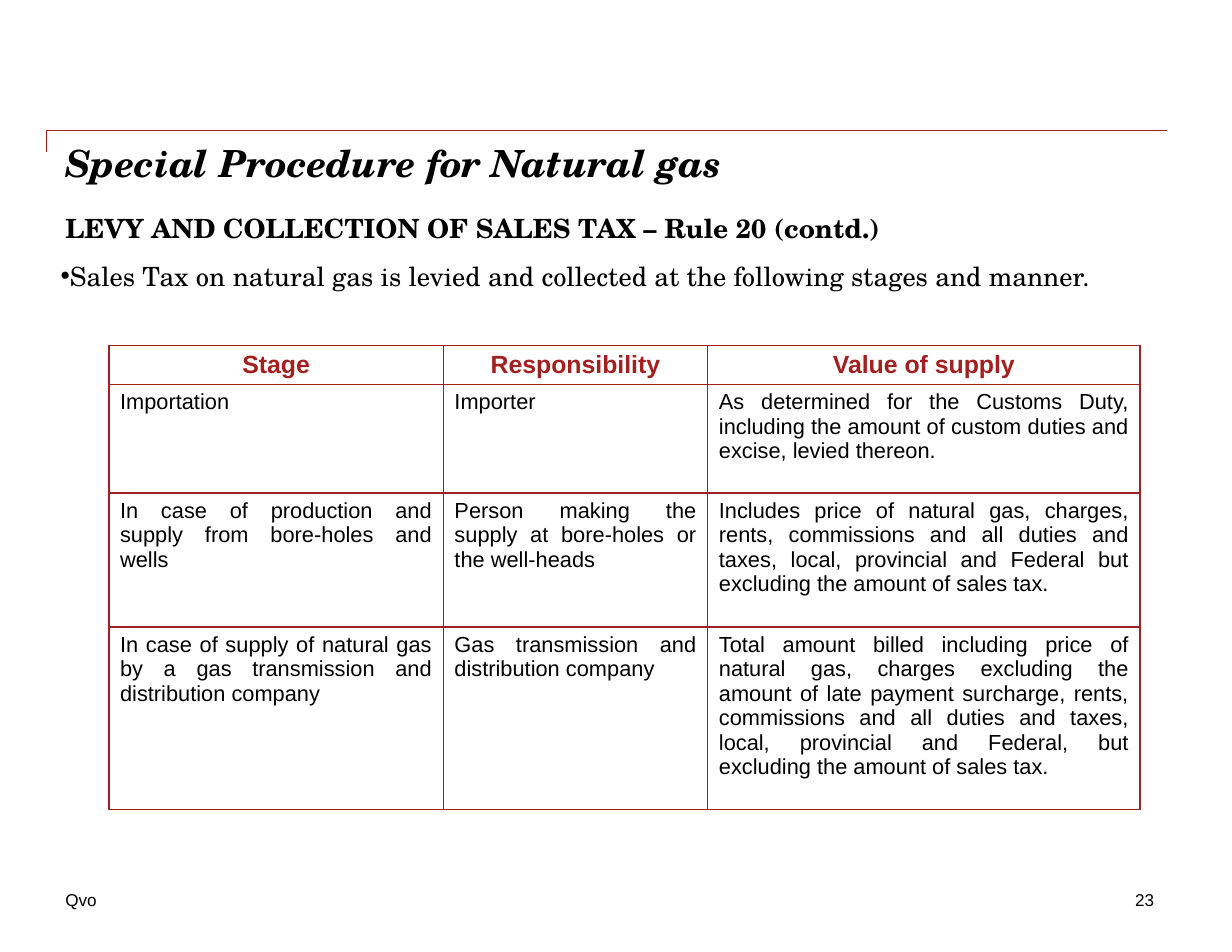
"""Build the slide on the special sales tax procedure for natural gas."""
import pptx
import pptx.dml.color
import pptx.enum.shapes
import pptx.enum.text
import pptx.oxml
import pptx.oxml.ns
import pptx.util
from pptx.oxml.xmlchemy import OxmlElement

Pt = pptx.util.Pt
ALIGN = pptx.enum.text.PP_ALIGN
RED = pptx.dml.color.RGBColor(0xA3, 0x20, 0x20)
BLACK = pptx.dml.color.RGBColor(0, 0, 0)
SERIF, SANS = "TeX Gyre Schola", "Arial"

COLUMNS = (215, 170, 278)
HEIGHTS = (25, 70, 86, 117.5)
ROWS = (
    ("Stage", "Responsibility", "Value of supply"),
    ("Importation", "Importer",
     "As determined for the Customs Duty, including the amount of custom "
     "duties and excise, levied thereon."),
    ("In case of production and supply from bore-holes and wells",
     "Person making the supply at bore-holes or the well-heads",
     "Includes price of natural gas, charges, rents, commissions and all "
     "duties and taxes, local, provincial and Federal but excluding the "
     "amount of sales tax."),
    ("In case of supply of natural gas by a gas transmission and "
     "distribution company",
     "Gas transmission and distribution company",
     "Total amount billed including price of natural gas, charges excluding "
     "the amount of late payment surcharge, rents, commissions and all duties "
     "and taxes, local, provincial and Federal, but excluding the amount of "
     "sales tax."),
)


def write(tf, text, size, font, color=BLACK, bold=False, italic=False,
          align=ALIGN.LEFT):
    """Write one formatted run in the first paragraph and return the paragraph."""
    p = tf.paragraphs[0]
    p.alignment = align
    r = p.add_run()
    r.text = text
    r.font.size, r.font.name = Pt(size), font
    r.font.bold, r.font.italic = bold, italic
    r.font.color.rgb = color
    return p


def place(sp, left, top, width, height, wrap=True):
    """Position a text shape, clear its insets and return its text frame."""
    sp.left, sp.top, sp.width, sp.height = map(Pt, (left, top, width, height))
    tf = sp.text_frame
    tf.margin_left = tf.margin_top = tf.margin_right = tf.margin_bottom = 0
    tf.vertical_anchor = pptx.enum.text.MSO_ANCHOR.TOP
    tf.auto_size = pptx.enum.text.MSO_AUTO_SIZE.NONE
    tf.word_wrap = wrap
    return tf


def set_bullet(p, char=None):
    """Set a flush bullet, or none, on a paragraph without indents."""
    p.space_before, p.space_after = Pt(0), Pt(10)
    pPr = p._p.get_or_add_pPr()
    pPr.set("marL", "0")
    pPr.set("indent", "0")
    bu = OxmlElement("a:buChar" if char else "a:buNone")
    if char:
        bu.set("char", char)
    pPr.append(bu)


def add_rule(s):
    """Draw the bent rule above the title."""
    c = s.shapes.add_connector(pptx.enum.shapes.MSO_CONNECTOR.ELBOW,
                               Pt(30), Pt(98), Pt(750), Pt(84))
    c.line.color.rgb, c.line.width = RED, Pt(1)
    gd = OxmlElement("a:gd")
    gd.set("name", "adj1")
    gd.set("fmla", "val 0")
    spPr = c._element.spPr
    spPr.find(pptx.oxml.ns.qn("a:prstGeom")).get_or_add_avLst().append(gd)
    spPr.append(OxmlElement("a:effectLst"))


def add_footer(s, text, left, width, align):
    """Add one small text at the foot of the slide."""
    sp = s.shapes.add_textbox(0, 0, 0, 0)
    tf = place(sp, left, 571.5, width, 13.5, wrap=False)
    write(tf, text, 11, SANS, align=align)


def set_borders(cell):
    """Outline a cell in red and leave it unfilled."""
    tcPr = cell._tc.get_or_add_tcPr()
    for side in "LRTB":
        tcPr.append(pptx.oxml.parse_xml(
            f'<a:ln{side} {pptx.oxml.ns.nsdecls("a")} w="{Pt(1)}"><a:solidFill>'
            f'<a:srgbClr val="{RED}"/></a:solidFill></a:ln{side}>'))
    cell.fill.background()


def add_stages(s):
    """Add the table of stages, responsibility and value of supply."""
    table = s.shapes.add_table(len(ROWS), len(COLUMNS), Pt(70), Pt(222),
                               Pt(sum(COLUMNS)), Pt(sum(HEIGHTS))).table
    table.first_row = table.horz_banding = False
    for col, width in zip(table.columns, COLUMNS):
        col.width = Pt(width)
    for i, (height, texts) in enumerate(zip(HEIGHTS, ROWS)):
        table.rows[i].height = Pt(height)
        for j, text in enumerate(texts):
            cell = table.cell(i, j)
            set_borders(cell)
            if i == 0:
                write(cell.text_frame, text, 16, SANS, RED, True,
                      align=ALIGN.CENTER)
            else:
                write(cell.text_frame, text, 14, SANS, align=ALIGN.JUSTIFY)


def main():
    """Build and save the slide."""
    prs = pptx.Presentation()
    prs.slide_width, prs.slide_height = Pt(792), Pt(612)
    s = prs.slides.add_slide(prs.slide_layouts[3])
    title, heading, body = list(s.placeholders)[:3]
    for extra in list(s.placeholders)[3:]:
        extra._element.getparent().remove(extra._element)

    add_rule(s)
    add_footer(s, "Qvo", 42, 24, ALIGN.LEFT)
    add_footer(s, "23", 688, 54, ALIGN.RIGHT)
    write(place(title, 42, 90, 708, 40), "Special Procedure for Natural gas",
          24, SERIF, bold=True, italic=True)
    set_bullet(write(place(heading, 42, 136, 708, 81),
                     "LEVY AND COLLECTION OF SALES TAX – Rule 20 (contd.)",
                     17, SERIF, bold=True))
    set_bullet(write(place(body, 39, 167, 708, 28),
                     "Sales Tax on natural gas is levied and collected at the "
                     "following stages and manner.",
                     17, SERIF, align=ALIGN.JUSTIFY), "•")
    add_stages(s)
    prs.save("out.pptx")


if __name__ == "__main__":
    main()
